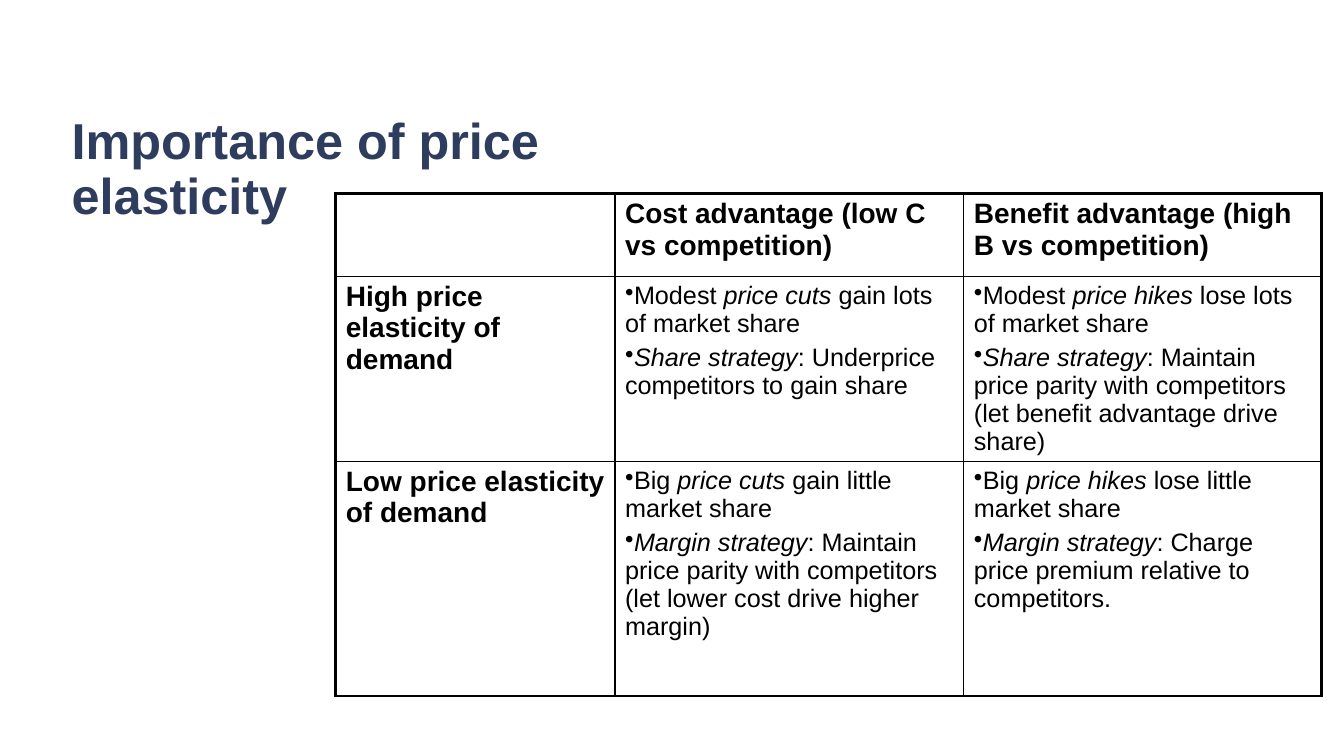
from lxml import etree
from pptx import Presentation
from pptx.dml.color import RGBColor
from pptx.enum.text import MSO_ANCHOR, MSO_AUTO_SIZE, PP_ALIGN
from pptx.oxml.ns import qn
from pptx.util import Inches, Pt

LEFT = PP_ALIGN.LEFT
MIDDLE = MSO_ANCHOR.MIDDLE
NO_FIT = MSO_AUTO_SIZE.NONE

THEME = {
    "font": "Arial",
    "navy": RGBColor.from_string("2E3C5D"),
    "black": RGBColor.from_string("000000"),
    "title": Pt(36),
    "head": Pt(20),
    "body": Pt(18),
    "gap": Pt(4),
    "thick": Pt(2.25),
    "thin": Pt(1),
}


def style(font, size, color, bold):
    font.name = THEME["font"]
    font.size = THEME[size]
    font.color.rgb = THEME[color]
    font.bold = bold


def border(cell, side, width):
    line = etree.SubElement(cell._tc.get_or_add_tcPr(), qn("a:ln" + side), w=str(width))
    fill = etree.SubElement(line, qn("a:solidFill"))
    etree.SubElement(fill, qn("a:srgbClr"), val=str(THEME["black"]))


prs = Presentation()
prs.slide_width, prs.slide_height = Inches(13.33), Inches(7.5)
slide = prs.slides.add_slide(prs.slide_layouts[5])

# Title
title = slide.shapes.title
title.left, title.top = Inches(0.61), Inches(1.44)
title.width, title.height = Inches(5.37), Inches(0.51)
frame = title.text_frame
frame.text = "Importance of price elasticity"
frame.word_wrap = True
frame.auto_size = NO_FIT
frame.vertical_anchor = MIDDLE
para = frame.paragraphs[0]
para.alignment = LEFT
para.line_spacing = 0.9
style(para.runs[0].font, "title", "navy", True)

# Cell wording: asterisks enclose italics, each line is a paragraph
ROWS = [
    ["", "Cost advantage (low C vs competition)", "Benefit advantage (high B vs competition)"],
    [
        "High price elasticity of demand",
        "Modest *price cuts* gain lots of market share\n"
        "*Share strategy*: Underprice competitors to gain share",
        "Modest *price hikes* lose lots of market share\n"
        "*Share strategy*: Maintain price parity with competitors "
        "(let benefit advantage drive share)",
    ],
    [
        "Low price elasticity of demand",
        "Big *price cuts* gain little market share\n"
        "*Margin strategy*: Maintain price parity with competitors "
        "(let lower cost drive higher margin)",
        "Big *price hikes *lose little market share\n"
        "*Margin strategy*: Charge price premium relative to competitors.",
    ],
]
WIDTHS = [2.77, 3.46, 3.55]
HEIGHTS = [0.82, 1.81, 2.33]

# Table grid
table = slide.shapes.add_table(
    len(HEIGHTS), len(WIDTHS), Inches(3.33), Inches(1.92),
    Inches(sum(WIDTHS)), Inches(sum(HEIGHTS))).table
table.first_row = table.horz_banding = False
for col, width in zip(table.columns, WIDTHS):
    col.width = Inches(width)
for row, height in zip(table.rows, HEIGHTS):
    row.height = Inches(height)

# Cells: thick outer frame, thin inner lines, bullets in the body
for r, texts in enumerate(ROWS):
    for c, text in enumerate(texts):
        cell = table.cell(r, c)
        outer = {"L": c == 0, "R": c == len(WIDTHS) - 1,
                 "T": r == 0, "B": r == len(HEIGHTS) - 1}
        for side, edge in outer.items():
            border(cell, side, THEME["thick" if edge else "thin"])
        cell.fill.background()

        head = r == 0 or c == 0
        size = "head" if head else "body"
        cell.text_frame.text = text
        for para in cell.text_frame.paragraphs:
            parts = para.text.split("*")
            para.clear()
            para.space_before = THEME["gap"]
            style(para.font, size, "black", head)
            if not head:
                etree.SubElement(para._p.get_or_add_pPr(), qn("a:buChar"), char="•")
                # Bullet precedes the default run style in the schema
                props = para._p.pPr
                props.append(props.find(qn("a:defRPr")))
            for i, part in enumerate(parts):
                if part:
                    run = para.add_run()
                    run.text = part
                    style(run.font, size, "black", head)
                    run.font.italic = i % 2 == 1

prs.save("out.pptx")
